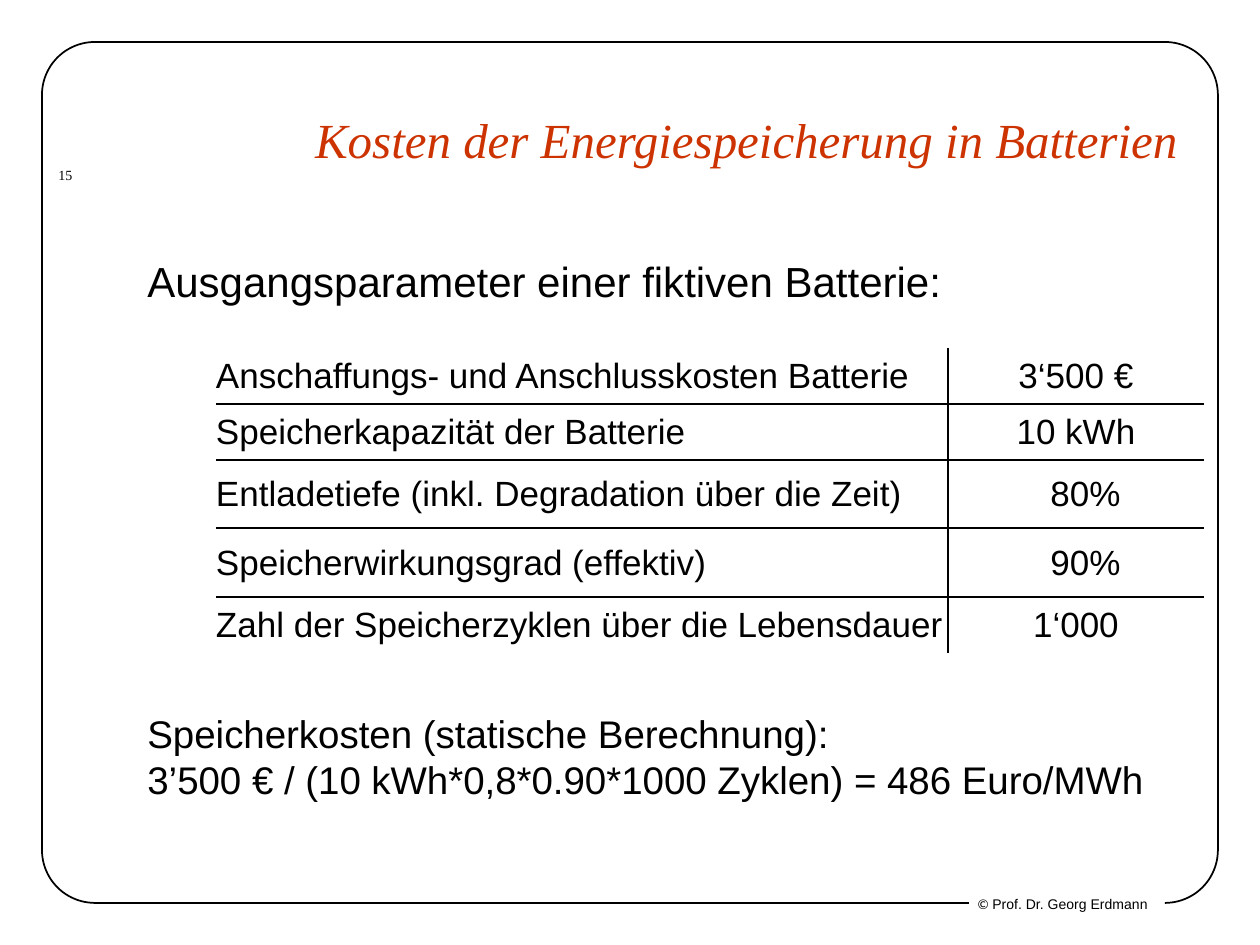
import math

from lxml import etree
from pptx import Presentation
from pptx import util as u
from pptx.dml.color import RGBColor
from pptx.enum import shapes, text
from pptx.oxml import ns

PX = u.Inches(1) / 126
BLACK = RGBColor(0x00, 0x00, 0x00)
RED = RGBColor(0xCC, 0x33, 0x00)
LINE_WIDTH = u.Pt(1)

PARAMETERS = [
    ("Anschaffungs- und Anschlusskosten Batterie", "3‘500 €"),
    ("Speicherkapazität der Batterie", "10 kWh"),
    ("Entladetiefe (inkl. Degradation über die Zeit)", "80%"),
    ("Speicherwirkungsgrad (effektiv)", "90%"),
    ("Zahl der Speicherzyklen über die Lebensdauer", "1‘000"),
]
ROW_HEIGHTS = [56, 56, 68, 69, 56]
COLUMN_WIDTHS = [732, 256]


def px(*lengths):
    return [u.Emu(round(length * PX)) for length in lengths]


def write(paragraph, content, size, font="Arial", color=BLACK, italic=False,
          align=text.PP_ALIGN.LEFT):
    """Append content to the paragraph; a newline becomes a line break."""
    paragraph.alignment = align
    for number, line in enumerate(content.split("\n")):
        if number:
            paragraph.add_line_break()
        run = paragraph.add_run()
        run.text = line
        run.font.name = font
        run.font.size = u.Pt(size)
        run.font.italic = italic
        run.font.color.rgb = color


def add_text_frame(slide, box, wrap=True, anchor=text.MSO_ANCHOR.TOP):
    frame = slide.shapes.add_textbox(*px(*box)).text_frame
    frame.word_wrap = wrap
    frame.vertical_anchor = anchor
    return frame


def add_line(slide, start, end):
    line = slide.shapes.add_connector(
        shapes.MSO_CONNECTOR.STRAIGHT, *px(*start, *end))
    line.line.color.rgb = BLACK
    line.line.width = LINE_WIDTH
    etree.SubElement(line.element.spPr, ns.qn("a:effectLst"))


def add_corner(slide, center, radius, start_angle, steps=24):
    """Draw a quarter circle clockwise from start_angle, in degrees."""
    angles = [math.radians(start_angle + 90 * step / steps)
              for step in range(steps + 1)]
    start, *rest = [px(center[0] + radius * math.cos(angle),
                       center[1] + radius * math.sin(angle)) for angle in angles]
    builder = slide.shapes.build_freeform(*start)
    builder.add_line_segments(rest, close=False)
    corner = builder.convert_to_shape()
    corner.shadow.inherit = False
    corner.fill.background()
    corner.line.color.rgb = BLACK
    corner.line.width = LINE_WIDTH


def add_frame(slide, left, top, width, height, radius, footer_gap):
    """Draw a rounded frame whose bottom edge leaves a gap on the right."""
    right, bottom = left + width, top + height
    near_x, far_x = left + radius, right - radius
    near_y, far_y = top + radius, bottom - radius
    add_line(slide, (near_x, top), (far_x, top))
    add_line(slide, (near_x, bottom), (far_x - footer_gap, bottom))
    for x in (left, right):
        add_line(slide, (x, near_y), (x, far_y))
    centers = [(far_x, far_y), (near_x, far_y), (near_x, near_y), (far_x, near_y)]
    for number, center in enumerate(centers):
        add_corner(slide, center, radius, 90 * number)


def add_title(slide, box):
    frame = add_text_frame(slide, box, anchor=text.MSO_ANCHOR.BOTTOM)
    write(frame.paragraphs[0], "Kosten der Energiespeicherung in Batterien", 28,
          font="Times New Roman", color=RED, italic=True, align=text.PP_ALIGN.RIGHT)


def add_page_number(slide, box):
    frame = add_text_frame(slide, box, wrap=False)
    write(frame.paragraphs[0], "15", 8, font="Times New Roman")


def add_copyright(slide, box):
    paragraph = add_text_frame(slide, box, wrap=False).paragraphs[0]
    write(paragraph, "© ", 8, font="Calibri")
    write(paragraph, "Prof. Dr. Georg Erdmann", 8)


def add_body(slide, box):
    frame = add_text_frame(slide, box)
    write(frame.paragraphs[0], "Ausgangsparameter einer fiktiven Batterie:", 24)
    result = frame.add_paragraph()
    result.space_before = u.Pt(231)
    write(result, "Speicherkosten (statische Berechnung):\n"
          "3’500 € / (10 kWh*0,8*0.90*1000 Zyklen) = 486 Euro/MWh", 22)


def set_borders(cell, **visible):
    """Rule the sides L, R, T and B that are true and clear the others."""
    properties = cell._tc.get_or_add_tcPr()
    for side in "LRTB":
        border = etree.SubElement(
            properties, ns.qn(f"a:ln{side}"), w=str(LINE_WIDTH))
        if visible[side]:
            fill = etree.SubElement(border, ns.qn("a:solidFill"))
            etree.SubElement(fill, ns.qn("a:srgbClr"), val=str(BLACK))
        else:
            etree.SubElement(border, ns.qn("a:noFill"))


def add_parameter_table(slide, left, top):
    box = px(left, top, sum(COLUMN_WIDTHS), sum(ROW_HEIGHTS))
    table = slide.shapes.add_table(len(PARAMETERS), len(COLUMN_WIDTHS), *box).table
    table.first_row = table.horz_banding = False
    for column, width in zip(table.columns, px(*COLUMN_WIDTHS)):
        column.width = width
    for row, height in zip(table.rows, px(*ROW_HEIGHTS)):
        row.height = height
    last_row = len(PARAMETERS) - 1
    for r, values in enumerate(PARAMETERS):
        for c, value in enumerate(values):
            cell = table.cell(r, c)
            set_borders(cell, L=c == 1, R=c == 0, T=r > 0, B=r < last_row)
            cell.fill.background()
            cell.vertical_anchor = text.MSO_ANCHOR.MIDDLE
            indent = 20 if value.endswith("%") else c
            cell.margin_left, cell.margin_right = px(indent, 1)
            cell.margin_top, cell.margin_bottom = px(1, 0)
            write(cell.text_frame.paragraphs[0], value, 20,
                  align=text.PP_ALIGN.CENTER if c else text.PP_ALIGN.LEFT)


def main():
    presentation = Presentation()
    presentation.slide_width, presentation.slide_height = px(1260, 945)
    slide = presentation.slides.add_slide(presentation.slide_layouts[6])
    add_frame(slide, 42, 42, 1176, 861, radius=53, footer_gap=196)
    add_copyright(slide, (965, 889, 198, 30))
    add_page_number(slide, (46, 160, 53, 29))
    add_title(slide, (222, 53, 968, 122))
    add_body(slide, (135, 249, 1079, 564))
    add_parameter_table(slide, 216, 348)
    presentation.save("out.pptx")


if __name__ == "__main__":
    main()
